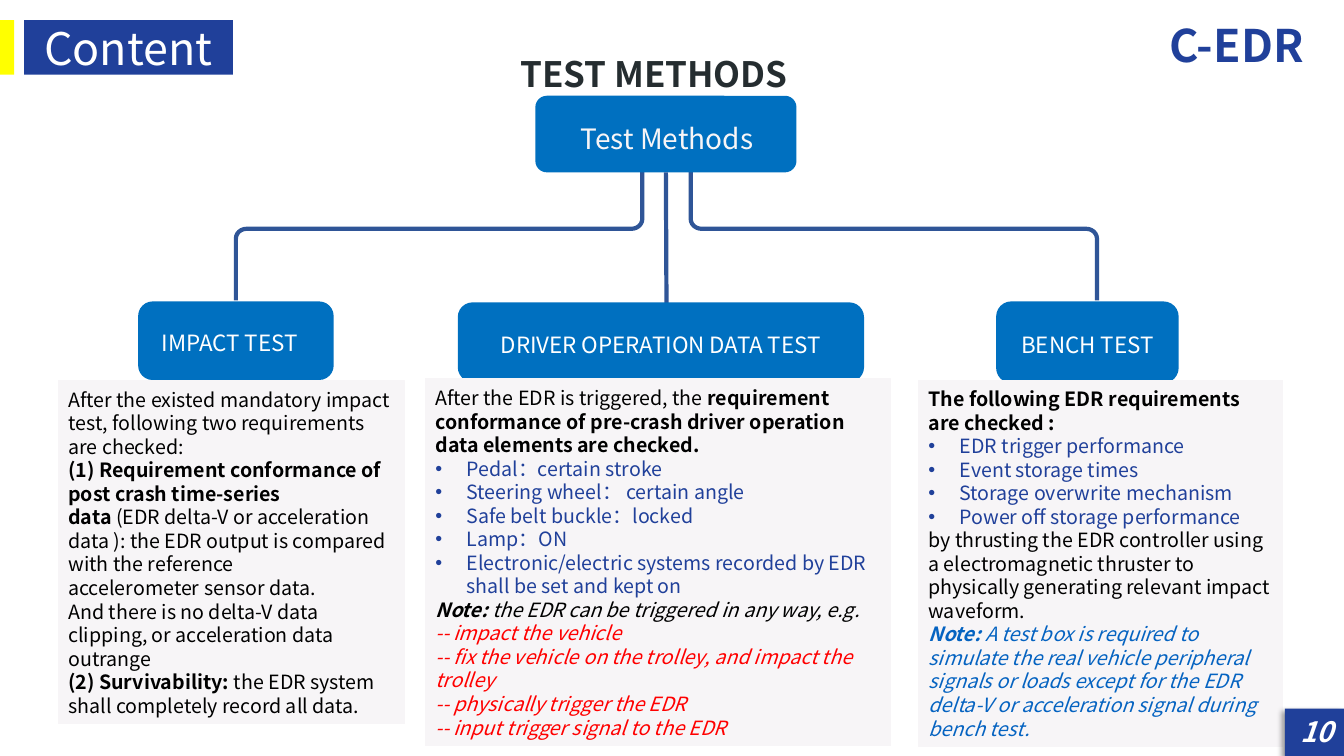
import math

import lxml.etree
import pptx
import pptx.dml.color
import pptx.enum.shapes
import pptx.enum.text
import pptx.oxml.ns
import pptx.util

FONT = "Noto Sans CJK SC"
NAVY, BLUE, LINE, PALE = "20409A", "0070C0", "2F5597", "F7F5F7"
WHITE, BLACK, RED, NOTE_BLUE, YELLOW = "FFFFFF", "000000", "FF0000", "0563C1", "FFFF00"
SHAPE = pptx.enum.shapes.MSO_SHAPE
ALIGN = pptx.enum.text.PP_ALIGN
ANCHOR = pptx.enum.text.MSO_ANCHOR


def rgb(hex_colour):
    return pptx.dml.color.RGBColor.from_string(hex_colour)


def add_xml(parent, tag, **attributes):
    return lxml.etree.SubElement(parent, pptx.oxml.ns.qn(tag), attributes)


def write(frame, paragraphs, size=14, colour=BLACK, bold=False, italic=False,
          align=ALIGN.LEFT, anchor=ANCHOR.TOP, insets=(0.1, 0.05, 0.1, 0.05)):
    """Fill a frame; a paragraph is a string or a list of (text, overrides) runs.

    An override "bullet" on the first run makes the paragraph a bullet point.
    """
    frame.word_wrap = True
    frame.auto_size = pptx.enum.text.MSO_AUTO_SIZE.NONE
    frame.vertical_anchor = anchor
    (frame.margin_left, frame.margin_top,
     frame.margin_right, frame.margin_bottom) = map(pptx.util.Inches, insets)
    for index, runs in enumerate(paragraphs):
        paragraph = frame.add_paragraph() if index else frame.paragraphs[0]
        paragraph.alignment = align
        paragraph.line_spacing = pptx.util.Pt(size * 1.2)
        paragraph.space_before = paragraph.space_after = pptx.util.Pt(0)
        if isinstance(runs, str):
            runs = [(runs, {})]
        if runs[0][1].get("bullet"):
            properties = paragraph._p.get_or_add_pPr()
            indent = pptx.util.Inches(0.31)
            properties.set("marL", str(indent))
            properties.set("indent", str(-indent))
            add_xml(properties, "a:buFont", typeface="Arial")
            add_xml(properties, "a:buChar", char="•")
        for words, overrides in runs:
            run = paragraph.add_run()
            run.text = words
            font = run.font
            font.size = pptx.util.Pt(size)
            font.bold = overrides.get("bold", bold)
            font.italic = overrides.get("italic", italic)
            font.color.rgb = rgb(overrides.get("colour", colour))
            font.name = FONT
            add_xml(run._r.get_or_add_rPr(), "a:ea", typeface=FONT)


class Deck:
    """Holds the presentation and current slide; places are percent of its size."""

    def __init__(self):
        self.presentation = pptx.Presentation()
        self.presentation.slide_width = pptx.util.Inches(13.33)
        self.presentation.slide_height = pptx.util.Inches(7.5)
        self.slide = self.presentation.slides.add_slide(self.presentation.slide_layouts[5])
        self.shapes = self.slide.shapes

    def x(self, share):
        return round(self.presentation.slide_width * share / 100)

    def y(self, share):
        return round(self.presentation.slide_height * share / 100)

    def place(self, left, top, width, height):
        return self.x(left), self.y(top), self.x(width), self.y(height)

    def title(self, words, at, **style):
        title = self.shapes.title
        title.left, title.top, title.width, title.height = self.place(*at)
        write(title.text_frame, [words], **style)

    def text(self, words, at, **style):
        write(self.shapes.add_textbox(*self.place(*at)).text_frame, [words], **style)

    def block(self, at, fill, paragraphs=(), kind=SHAPE.RECTANGLE, corner=None, outline=None, **style):
        block = self.shapes.add_shape(kind, *self.place(*at))
        block.shadow.inherit = False
        block.fill.solid()
        block.fill.fore_color.rgb = rgb(fill)
        if corner:
            block.adjustments[0] = corner
        if outline:
            block.line.color.rgb = rgb(outline)
            block.line.width = pptx.util.Pt(0.75)
        else:
            block.line.fill.background()
        if paragraphs:
            write(block.text_frame, paragraphs, anchor=ANCHOR.MIDDLE, **style)
        return block

    def node(self, at, words, size, corner=0.185, colour=WHITE, insets=(0.02, 0.06, 0.02, 0.02)):
        return self.block(at, BLUE, [words], SHAPE.ROUNDED_RECTANGLE, corner,
                          size=size, colour=colour, align=ALIGN.CENTER, insets=insets)

    def draw_line(self, line):
        line.color.rgb = rgb(LINE)
        line.width = pptx.util.Pt(3)

    def stem(self, parent, end_x, end_y):
        stem = self.shapes.add_connector(pptx.enum.shapes.MSO_CONNECTOR.STRAIGHT,
                                         0, 0, self.x(end_x), self.y(end_y))
        stem.begin_connect(parent, 2)
        self.draw_line(stem.line)
        add_xml(stem._element.spPr, "a:effectLst")

    def branch(self, start_x, end_x, top, bar, bottom):
        """Draw a line down, across and down again, with two rounded corners."""
        side = math.copysign(1, end_x - start_x)
        radius_x, radius_y = 0.8 * side, 1.3
        turns = [math.radians(angle) for angle in range(0, 91, 15)]
        points = [(start_x + radius_x * (1 - math.cos(turn)),
                   bar - radius_y * (1 - math.sin(turn))) for turn in turns]
        points += [(end_x - radius_x * (1 - math.sin(turn)),
                    bar + radius_y * (1 - math.cos(turn))) for turn in turns]
        points.append((end_x, bottom))
        outline = self.shapes.build_freeform(self.x(start_x), self.y(top))
        outline.add_line_segments([(self.x(x), self.y(y)) for x, y in points], close=False)
        branch = outline.convert_to_shape()
        branch.fill.background()
        branch.shadow.inherit = False
        self.draw_line(branch.line)

    def cast_shadow(self, block):
        effects = block._element.spPr.find(pptx.oxml.ns.qn("a:effectLst"))
        shadow = add_xml(effects, "a:outerShdw", blurRad=str(pptx.util.Pt(4)),
                         dist=str(pptx.util.Pt(3)), dir=str(135 * 60000))
        add_xml(add_xml(shadow, "a:srgbClr", val=BLACK), "a:alpha", val="40000")


def bullets(*items):
    return [[(item, {"bullet": True, "colour": NAVY})] for item in items]


def note(words, colour):
    return [("Note: ", {"bold": True, "italic": True, "colour": colour}),
            (words, {"italic": True, "colour": colour})]


BOLD = {"bold": True}
IMPACT = [
    "After the existed mandatory impact test, following two requirements are checked:",
    [("(1) Requirement conformance of post crash time-series", BOLD)],
    [("data ", BOLD),
     ("(EDR delta-V or acceleration data ): the EDR output is compared with the reference", {})],
    "accelerometer sensor data.",
    "And there is no delta-V data clipping, or acceleration data outrange",
    [("(2) Survivability: ", BOLD), ("the EDR system shall completely record all data.", {})],
]
DRIVER = [
    [("After the EDR is triggered, the ", {}),
     ("requirement conformance of pre-crash driver operation data elements are checked.", BOLD)],
    *bullets("Pedal：certain stroke", "Steering wheel： certain angle",
             "Safe belt buckle：locked", "Lamp：ON",
             "Electronic/electric systems recorded by EDR shall be set and kept on"),
    note("the EDR can be triggered in any way, e.g.", BLACK),
    *[[("-- " + way, {"italic": True, "colour": RED})] for way in (
        "impact the vehicle", "fix the vehicle on the trolley, and impact the trolley",
        "physically trigger the EDR", "input trigger signal to the EDR")],
]
BENCH = [
    [("The following EDR requirements are checked :", BOLD)],
    *bullets("EDR trigger performance", "Event storage times",
             "Storage overwrite mechanism", "Power off storage performance"),
    "by thrusting the EDR controller using a electromagnetic thruster to physically "
    "generating relevant impact waveform.",
    note("A test box is required to simulate the real vehicle peripheral signals or loads "
         "except for the EDR delta-V or acceleration signal during bench test.", NOTE_BLUE),
]


def main():
    deck = Deck()
    deck.title("TEST METHODS", (38.48, 6.53, 21.38, 6.4), size=25, colour="252D30",
               bold=True, insets=(0.03,) * 4)
    deck.text("C-EDR", (77.19, 1.73, 20.56, 8.53), size=32, colour=NAVY, bold=True,
              align=ALIGN.RIGHT)
    deck.block((1.8, 2.67, 15.53, 7.2), NAVY, ["Content"], size=32, colour=WHITE,
               align=ALIGN.CENTER)
    deck.block((0, 2.67, 1.05, 7.2), YELLOW)

    for start_x, end_x in ((47.79, 17.55), (51.39, 81.62)):
        deck.branch(start_x, end_x, top=21.87, bar=30.27, bottom=39.73)
    root = deck.node((39.83, 12.67, 19.43, 10.13), "Test Methods", 20, corner=0.15,
                     colour=PALE, insets=(0.04, 0.1, 0.02, 0.02))
    deck.stem(root, 49.59, 40.13)
    deck.node((10.28, 39.87, 14.55, 10.4), "IMPACT TEST", 16, insets=(0.02, 0.06, 0.14, 0.02))
    deck.node((34.06, 40, 30.23, 10.53), "DRIVER OPERATION DATA TEST", 16)
    deck.node((74.12, 39.87, 13.58, 10.8), "BENCH TEST", 16)

    for at, details in (((4.35, 50.4, 25.73, 45.33), IMPACT),
                        ((31.66, 50.13, 34.58, 48.53), DRIVER),
                        ((68.34, 50.27, 27.08, 48.53), BENCH)):
        deck.block(at, PALE, details, outline=PALE)

    deck.cast_shadow(deck.block((95.6, 93.73, 4.4, 6.27), NAVY))
    deck.text("10", (77.42, 94.13, 22.51, 5.33), size=20, colour=WHITE, bold=True,
              italic=True, align=ALIGN.RIGHT, anchor=ANCHOR.MIDDLE)
    deck.presentation.save("out.pptx")


if __name__ == "__main__":
    main()
